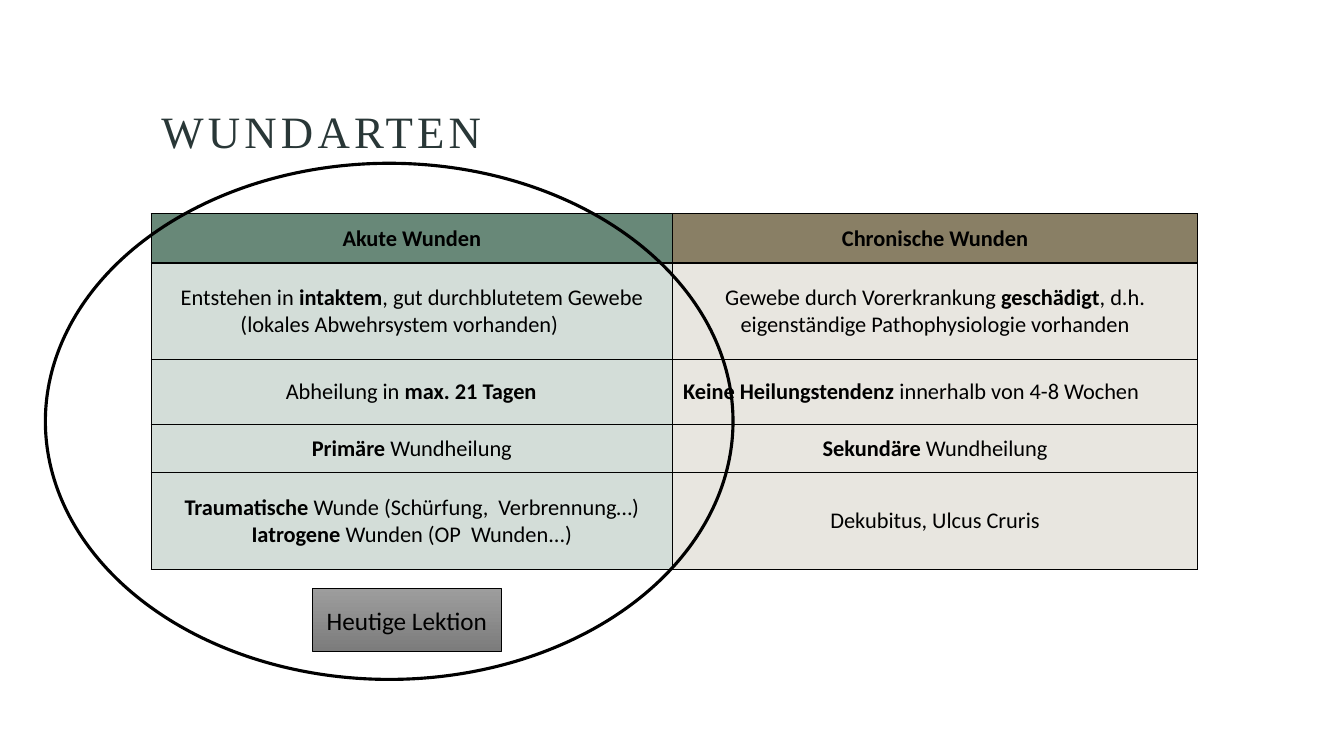
from dataclasses import dataclass

from lxml import etree
from pptx import Presentation
from pptx.dml.color import RGBColor
from pptx.enum.shapes import MSO_SHAPE
from pptx.enum.text import MSO_ANCHOR, MSO_AUTO_SIZE, PP_ALIGN
from pptx.oxml.ns import qn
from pptx.util import Inches, Pt

ELLIPSE, RECT = MSO_SHAPE.OVAL, MSO_SHAPE.RECTANGLE
MIDDLE, BOTTOM = MSO_ANCHOR.MIDDLE, MSO_ANCHOR.BOTTOM
LEFT, CENTER = PP_ALIGN.LEFT, PP_ALIGN.CENTER
NO_FIT = MSO_AUTO_SIZE.NONE


@dataclass(frozen=True)
class Theme:
    title_font: str = "Times New Roman"
    body_font: str = "Calibri"
    title_size: int = 32
    cell_size: int = 16
    label_size: int = 18
    title: str = "293737"
    ink: str = "000000"
    heads: tuple = ("688878", "897F65")
    bodies: tuple = ("D3DDD8", "E8E6E0")
    label_stops: tuple = ("9D9D9D", "7C7C7C")


theme = Theme()


def style_run(r, font, size, color, bold=False):
    r.font.name = font
    r.font.size = Pt(size)
    r.font.bold = bold
    r.font.color.rgb = RGBColor.from_string(color)


def add_borders(cell):
    tc_pr = cell._tc.get_or_add_tcPr()
    for i, side in enumerate(("lnL", "lnR", "lnT", "lnB")):
        ln = etree.Element(qn(f"a:{side}"), w=str(Pt(1)))
        fill = etree.SubElement(ln, qn("a:solidFill"))
        etree.SubElement(fill, qn("a:srgbClr"), val=theme.ink)
        tc_pr.insert(i, ln)


prs = Presentation()
prs.slide_width, prs.slide_height = Inches(13.33), Inches(7.5)
s = prs.slides.add_slide(prs.slide_layouts[5])

left, width = Inches(1.5), Inches(10.38)

title = s.shapes.title
title.left, title.top, title.width, title.height = left, Inches(0.12), width, Inches(1.5)
tf = title.text_frame
tf.text = "WUNDARTEN"
tf.auto_size = NO_FIT
tf.vertical_anchor = BOTTOM
p = tf.paragraphs[0]
p.alignment = LEFT
p.line_spacing = 0.9
r = p.runs[0]
style_run(r, theme.title_font, theme.title_size, theme.title)
r.font._element.set("spc", "300")

# Asterisks enclose bold text; each cell is a list of paragraphs.
rows = [
    (["*Akute Wunden*"], ["*Chronische Wunden*"]),
    (["Entstehen in *intaktem*, gut durchblutetem Gewebe",
      " (lokales Abwehrsystem vorhanden)\t"],
     ["Gewebe durch Vorerkrankung *geschädigt*, d.h. eigenständige Pathophysiologie vorhanden"]),
    (["Abheilung in *max. 21 Tagen\t*"],
     ["*Keine Heilungstendenz *innerhalb von 4-8 Wochen\t"]),
    (["*Primäre* Wundheilung"], ["*Sekundäre* Wundheilung"]),
    (["*Traumatische* Wunde (Schürfung,  Verbrennung…)",
      "*Iatrogene* Wunden (OP  Wunden...)"],
     ["Dekubitus, Ulcus Cruris"]),
]
col_widths = (5.17, 5.21)
row_heights = (0.49, 0.96, 0.64, 0.48, 0.96)

table = s.shapes.add_table(len(rows), len(col_widths), left, Inches(2.12),
                           width, Inches(sum(row_heights))).table
for col, w in zip(table.columns, col_widths):
    col.width = Inches(w)
for i, (row, h) in enumerate(zip(rows, row_heights)):
    table.rows[i].height = Inches(h)
    fills = theme.bodies if i else theme.heads
    for j, lines in enumerate(row):
        cell = table.cell(i, j)
        cell.vertical_anchor = MIDDLE
        cell.fill.solid()
        cell.fill.fore_color.rgb = RGBColor.from_string(fills[j])
        add_borders(cell)
        tf = cell.text_frame
        for k, line in enumerate(lines):
            p = tf.add_paragraph() if k else tf.paragraphs[0]
            p.alignment = CENTER
            for n, part in enumerate(line.split("*")):
                if part:
                    r = p.add_run()
                    r.text = part
                    style_run(r, theme.body_font, theme.cell_size, theme.ink, n % 2 == 1)

ring = s.shapes.add_shape(ELLIPSE, Inches(0.45), Inches(1.62), Inches(6.82), Inches(5.12))
ring.fill.background()
label = s.shapes.add_shape(RECT, Inches(3.1), Inches(5.84), Inches(1.87), Inches(0.62))
label.fill.gradient()
label.fill.gradient_angle = 270
for stop, color in zip(label.fill.gradient_stops, theme.label_stops):
    stop.color.rgb = RGBColor.from_string(color)
for sp, line_width in ((ring, 2.25), (label, 0.5)):
    sp.shadow.inherit = False
    sp.line.color.rgb = RGBColor.from_string(theme.ink)
    sp.line.width = Pt(line_width)

tf = label.text_frame
tf.text = "Heutige Lektion"
tf.word_wrap = True
tf.vertical_anchor = MIDDLE
p = tf.paragraphs[0]
p.alignment = CENTER
style_run(p.runs[0], theme.body_font, theme.label_size, theme.ink)

prs.save("out.pptx")
